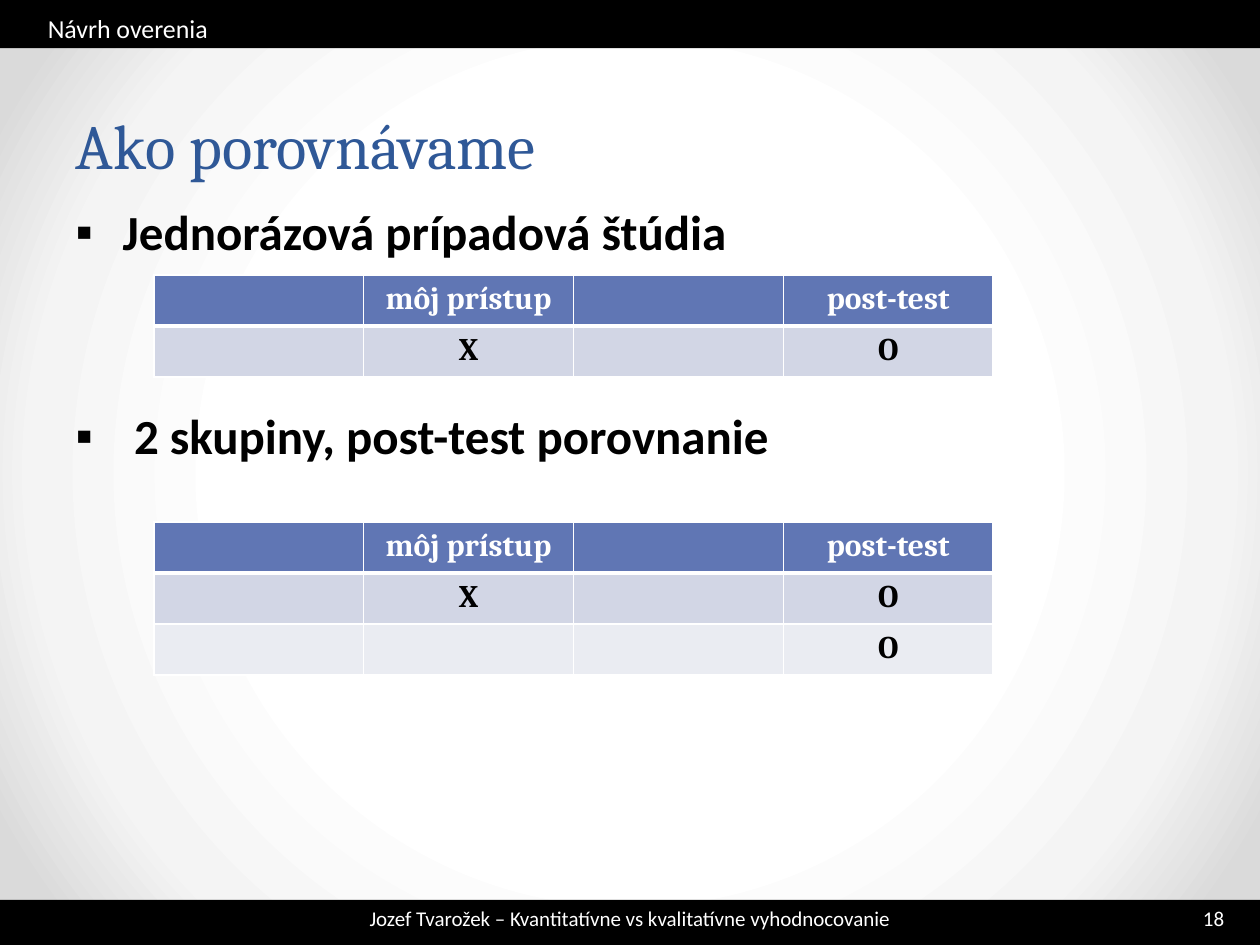
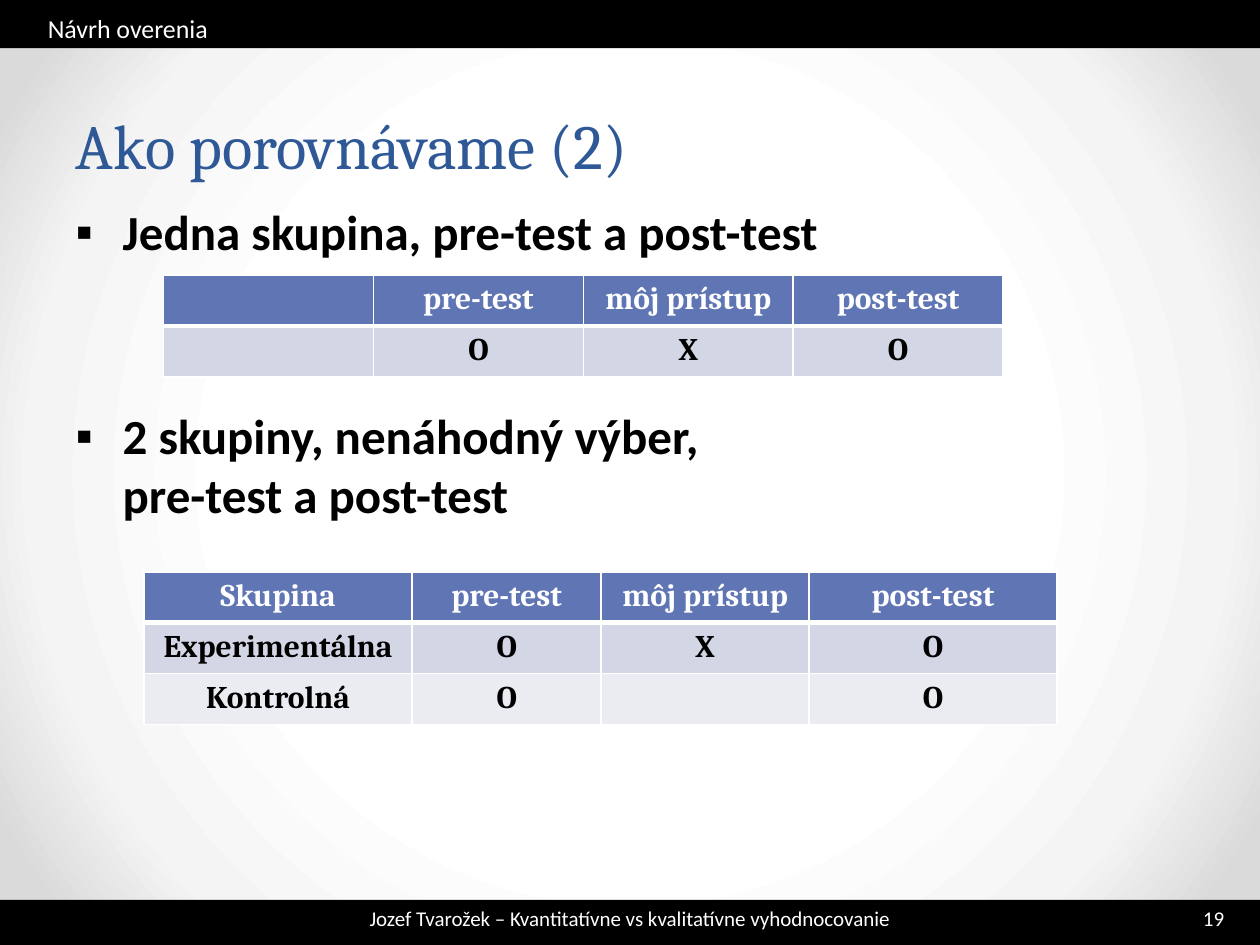
from lxml.etree import SubElement
from pptx import Presentation
from pptx.dml.color import RGBColor
from pptx.enum.shapes import MSO_SHAPE as Shape
from pptx.enum.text import MSO_ANCHOR as Anchor, MSO_AUTO_SIZE as AutoSize, PP_ALIGN as Align
from pptx.oxml.ns import qn
from pptx.util import Cm, Pt

BLACK, WHITE, TITLE_BLUE = "000000", "FFFFFF", "2F5897"
HEADER_FILL, BAND_FILLS = "6076B4", ("D2D6E5", "EAECF2")
GLOW_STOPS = ((50, WHITE), (76, "F4F4F4"), (92, "DADADA"))
HEADING_FONT, BODY_FONT = "Cambria", "Calibri"
PAGE_WIDTH, PAGE_HEIGHT = 25.4, 19.05
BAND_HEIGHT, FOOTER_TOP = 0.97, 18.14
ROW_HEIGHT = 1.03
EQUAL_COLUMNS = (4.23,) * 4
SECTION = "Návrh overenia"
FOOTER = "Jozef Tvarožek – Kvantitatívne vs kvalitatívne vyhodnocovanie"


def color(value):
    return RGBColor.from_string(value)


def style(para, size, name, ink, bold=False, align=Align.LEFT):
    para.alignment = align
    font = para.font
    font.size, font.name, font.bold = Pt(size), name, bold
    font.color.rgb = color(ink)


def place(box, left, top, width, height):
    box.left, box.top, box.width, box.height = map(Cm, (left, top, width, height))


def set_bullet(para, margin, char=None):
    props = para._p.get_or_add_pPr()
    props.set("marL", str(Cm(margin)))
    props.set("indent", str(-Cm(margin)))
    if char:
        SubElement(props, qn("a:buFont"), typeface="Arial")
        SubElement(props, qn("a:buChar"), char=char)
    else:
        SubElement(props, qn("a:buNone"))


def set_background(master):
    master.background.fill.solid()
    props = master.element.find(".//" + qn("p:bgPr"))
    props.remove(props[0])
    gradient = SubElement(props, qn("a:gradFill"), rotWithShape="1")
    props.insert(0, gradient)
    stops = SubElement(gradient, qn("a:gsLst"))
    for position, value in GLOW_STOPS:
        stop = SubElement(stops, qn("a:gs"), pos=str(position * 1000))
        SubElement(stop, qn("a:srgbClr"), val=value)
    circle = SubElement(gradient, qn("a:path"), path="circle")
    SubElement(circle, qn("a:fillToRect"), l="50000", t="50000", r="50000", b="50000")


def add_band(page, top):
    band = page.shapes.add_shape(Shape.RECTANGLE, 0, Cm(top), Cm(PAGE_WIDTH), Cm(BAND_HEIGHT))
    band.shadow.inherit = False
    band.fill.solid()
    band.fill.fore_color.rgb = color(BLACK)
    band.line.fill.background()


def add_footer_text(page, text, left, width, align):
    box = page.shapes.add_textbox(Cm(left), Cm(FOOTER_TOP), Cm(width), Cm(0.74))
    box.text_frame.word_wrap = True
    para = box.text_frame.paragraphs[0]
    para.text = text
    style(para, 12, BODY_FONT, WHITE, align=align)


def fill_title(box, text):
    place(box, 1.27, 1.75, 22.86, 1.78)
    frame = box.text_frame
    frame.text = text
    frame.auto_size = AutoSize.NONE
    frame.vertical_anchor = Anchor.MIDDLE
    para = frame.paragraphs[0]
    para.line_spacing = Pt(58)
    style(para, 36, HEADING_FONT, TITLE_BLUE)


def fill_section(box):
    place(box, 0.71, 0.13, 24.69, 0.84)
    frame = box.text_frame
    frame.text = SECTION
    frame.auto_size = AutoSize.NONE
    para = frame.paragraphs[0]
    set_bullet(para, 0)
    style(para, 14.8, BODY_FONT, WHITE)


def fill_list(box, items):
    place(box, 1.27, 3.94, 22.86, 13.79)
    frame = box.text_frame
    frame.auto_size = AutoSize.NONE
    for index, (text, margin) in enumerate(items):
        para = frame.add_paragraph() if index else frame.paragraphs[0]
        para.text = text
        set_bullet(para, margin, "▪")
        if index:
            para.space_before = Pt(83)
        style(para, 28, BODY_FONT, BLACK, bold=True)


def set_borders(cell, top, bottom):
    props = cell._tc.get_or_add_tcPr()
    widths = {"a:lnL": 1, "a:lnR": 1, "a:lnT": top, "a:lnB": bottom}
    for index, (tag, width) in enumerate(widths.items()):
        line = SubElement(props, qn(tag), w=str(Pt(width)))
        props.insert(index, line)
        fill = SubElement(line, qn("a:solidFill"))
        SubElement(fill, qn("a:srgbClr"), val=WHITE)


def add_grid(page, left, top, rows, columns=EQUAL_COLUMNS, header_height=ROW_HEIGHT):
    heights = [header_height] + [ROW_HEIGHT] * (len(rows) - 1)
    grid = page.shapes.add_table(len(rows), len(columns), Cm(left), Cm(top),
                                 Cm(sum(columns)), Cm(sum(heights))).table
    for column, width in zip(grid.columns, columns):
        column.width = Cm(width)
    for r, (texts, height) in enumerate(zip(rows, heights)):
        grid.rows[r].height = Cm(height)
        for c, text in enumerate(texts):
            cell = grid.cell(r, c)
            cell.fill.solid()
            cell.fill.fore_color.rgb = color(BAND_FILLS[(r - 1) % 2] if r else HEADER_FILL)
            set_borders(cell, 3 if r == 1 else 1, 1 if r else 3)
            para = cell.text_frame.paragraphs[0]
            if text:
                para.text = text
            style(para, 18, HEADING_FONT, BLACK if r else WHITE, True, Align.CENTER)


def add_page(deck, number, title, items):
    page = deck.slides.add_slide(deck.slide_layouts.get_by_name("Two Content"))
    heading, section, body = list(page.placeholders)[:3]
    for top in (FOOTER_TOP, 0):
        add_band(page, top)
    tree = page.shapes._spTree
    for box in (heading, section, body):
        tree.append(box._element)
    fill_title(heading, title)
    fill_section(section)
    fill_list(body, items)
    add_footer_text(page, str(number), 24, 1.4, Align.LEFT)
    add_footer_text(page, FOOTER, 6.3, 12.8, Align.CENTER)
    return page


def main():
    deck = Presentation()
    deck.slide_width, deck.slide_height = Cm(PAGE_WIDTH), Cm(PAGE_HEIGHT)
    set_background(deck.slide_master)

    page = add_page(deck, 18, "Ako porovnávame",
                    [("Jednorázová prípadová štúdia", 0.95),
                     ("2 skupiny, post-test porovnanie", 1.18)])
    single = [("", "môj prístup", "", "post-test"), ("", "X", "", "O")]
    add_grid(page, 3.1, 5.54, single)
    add_grid(page, 3.1, 10.52, single + [("", "", "", "O")])

    page = add_page(deck, 19, "Ako porovnávame (2)",
                    [("Jedna skupina, pre-test a post-test", 0.95),
                     ("2 skupiny, nenáhodný výber,\npre-test a post-test", 0.95)])
    tests = ("pre-test", "môj prístup", "post-test")
    add_grid(page, 3.3, 5.54, [("", *tests), ("", "O", "X", "O")])
    add_grid(page, 2.9, 11.53,
             [("Skupina", *tests), ("Experimentálna", "O", "X", "O"), ("Kontrolná", "O", "", "O")],
             columns=(5.41, 3.81, 4.19, 5), header_height=0.84)
    deck.save("out.pptx")


if __name__ == "__main__":
    main()
